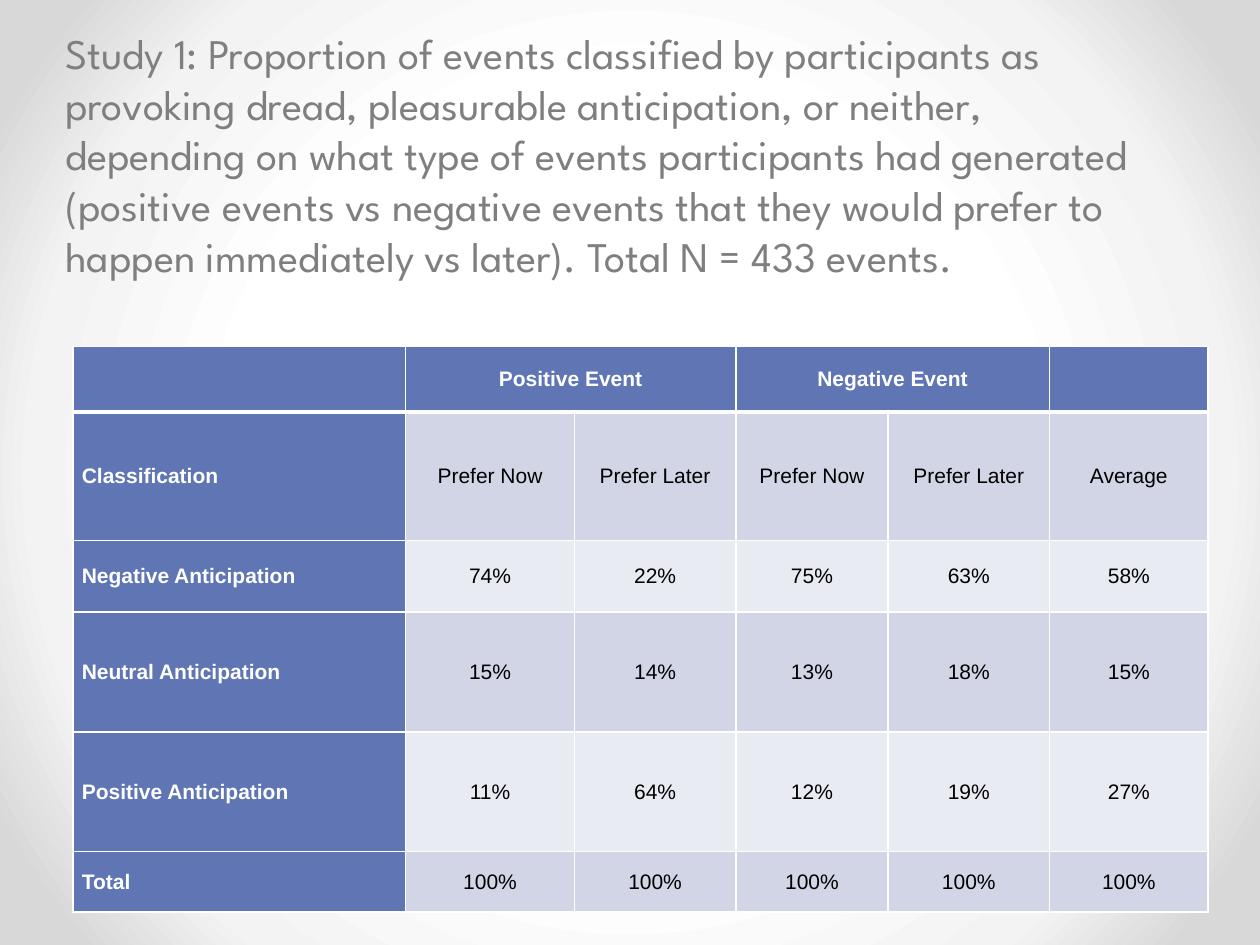
from lxml import etree
from pptx import Presentation
from pptx.dml.color import RGBColor
from pptx.enum import text
from pptx.oxml import parse_xml
from pptx.oxml.ns import nsdecls, qn
from pptx.util import Inches, Pt

TITLE = (
    "Study 1: Proportion of events classified by participants as provoking dread, "
    "pleasurable anticipation, or neither, depending on what type of events participants "
    "had generated (positive events vs negative events that they would prefer to happen "
    "immediately vs later). Total N = 433 events."
)
ROWS = [
    ["", "Positive Event", "", "Negative Event", "", ""],
    ["Classification", "Prefer Now", "Prefer Later", "Prefer Now", "Prefer Later", "Average"],
    ["Negative Anticipation", "74%", "22%", "75%", "63%", "58%"],
    ["Neutral Anticipation", "15%", "14%", "13%", "18%", "15%"],
    ["Positive Anticipation", "11%", "64%", "12%", "19%", "27%"],
    ["Total", "100%", "100%", "100%", "100%", "100%"],
]
COLUMN_WIDTHS = [2.64, 1.34, 1.28, 1.21, 1.28, 1.26]
ROW_HEIGHTS = [0.52, 1.02, 0.57, 0.95, 0.95, 0.48]
PAIR_STARTS = [1, 3]
BACKGROUND_STOPS = [(0, "FFFFFF"), (50, "FFFFFF"), (76, "F3F3F3"), (92, "D8D8D8"), (100, "D8D8D8")]

GREY = RGBColor(0x7F, 0x7F, 0x7F)
BLUE = RGBColor(0x60, 0x76, 0xB4)
DARK_BAND = RGBColor(0xD1, 0xD5, 0xE5)
LIGHT_BAND = RGBColor(0xE9, 0xEB, 0xF2)
WHITE = RGBColor(0xFF, 0xFF, 0xFF)
BLACK = RGBColor(0, 0, 0)


def style_text(para, font_name, size, color, bold=False):
    for span in para.runs:
        span.font.name = font_name
        span.font.size = Pt(size)
        span.font.color.rgb = color
        span.font.bold = bold


def set_background(page):
    page.background.fill.solid()
    solid = page.element.find(".//" + qn("p:bgPr")).find(qn("a:solidFill"))
    stops = "".join(
        f'<a:gs pos="{position * 1000}"><a:srgbClr val="{color}"/></a:gs>'
        for position, color in BACKGROUND_STOPS
    )
    gradient = parse_xml(
        f'<a:gradFill {nsdecls("a")} rotWithShape="1"><a:gsLst>{stops}</a:gsLst>'
        '<a:path path="circle"><a:fillToRect l="50000" t="50000" r="50000" b="50000"/></a:path>'
        "</a:gradFill>"
    )
    solid.getparent().replace(solid, gradient)


def set_borders(cell, widths):
    properties = cell._tc.get_or_add_tcPr()
    for index, (side, width) in enumerate(widths.items()):
        line = etree.Element(qn(f"a:ln{side}"), w=str(Pt(width)))
        fill = etree.SubElement(line, qn("a:solidFill"))
        etree.SubElement(fill, qn("a:srgbClr"), val=str(WHITE))
        properties.insert(index, line)


def add_title(page):
    box = page.shapes.add_textbox(Inches(0.42), Inches(0.17), Inches(8.92), Inches(2.58))
    box.text_frame.word_wrap = True
    box.text_frame.text = TITLE
    style_text(box.text_frame.paragraphs[0], "League Spartan", 24.1, GREY)


def fill_cell(cell, row, column):
    heading = row == 0 or column == 0
    cell.fill.solid()
    cell.fill.fore_color.rgb = BLUE if heading else DARK_BAND if row % 2 else LIGHT_BAND
    cell.margin_left = cell.margin_right = Inches(0.07)
    cell.margin_top = cell.margin_bottom = 0
    cell.vertical_anchor = text.MSO_ANCHOR.MIDDLE
    cell.text_frame.text = ROWS[row][column]
    para = cell.text_frame.paragraphs[0]
    para.alignment = text.PP_ALIGN.CENTER if column else text.PP_ALIGN.LEFT
    style_text(para, "Arial", 12, WHITE if heading else BLACK, heading)
    set_borders(cell, {"L": 1, "R": 1, "T": 3 if row == 1 else 1, "B": 3 if row == 0 else 1})


def add_results(page):
    frame = page.shapes.add_table(
        len(ROWS), len(COLUMN_WIDTHS), Inches(0.58), Inches(2.75),
        Inches(sum(COLUMN_WIDTHS)), Inches(sum(ROW_HEIGHTS)),
    )
    table = frame.table
    for column, width in zip(table.columns, COLUMN_WIDTHS):
        column.width = Inches(width)
    for row, height in zip(table.rows, ROW_HEIGHTS):
        row.height = Inches(height)
    for row in range(len(ROWS)):
        for column in range(len(COLUMN_WIDTHS)):
            fill_cell(table.cell(row, column), row, column)
    for start in PAIR_STARTS:
        table.cell(0, start).merge(table.cell(0, start + 1))


def main():
    deck = Presentation()
    deck.slide_width, deck.slide_height = Inches(10), Inches(7.5)
    page = deck.slides.add_slide(deck.slide_layouts[6])
    set_background(page)
    add_title(page)
    add_results(page)
    deck.save("out.pptx")


if __name__ == "__main__":
    main()
